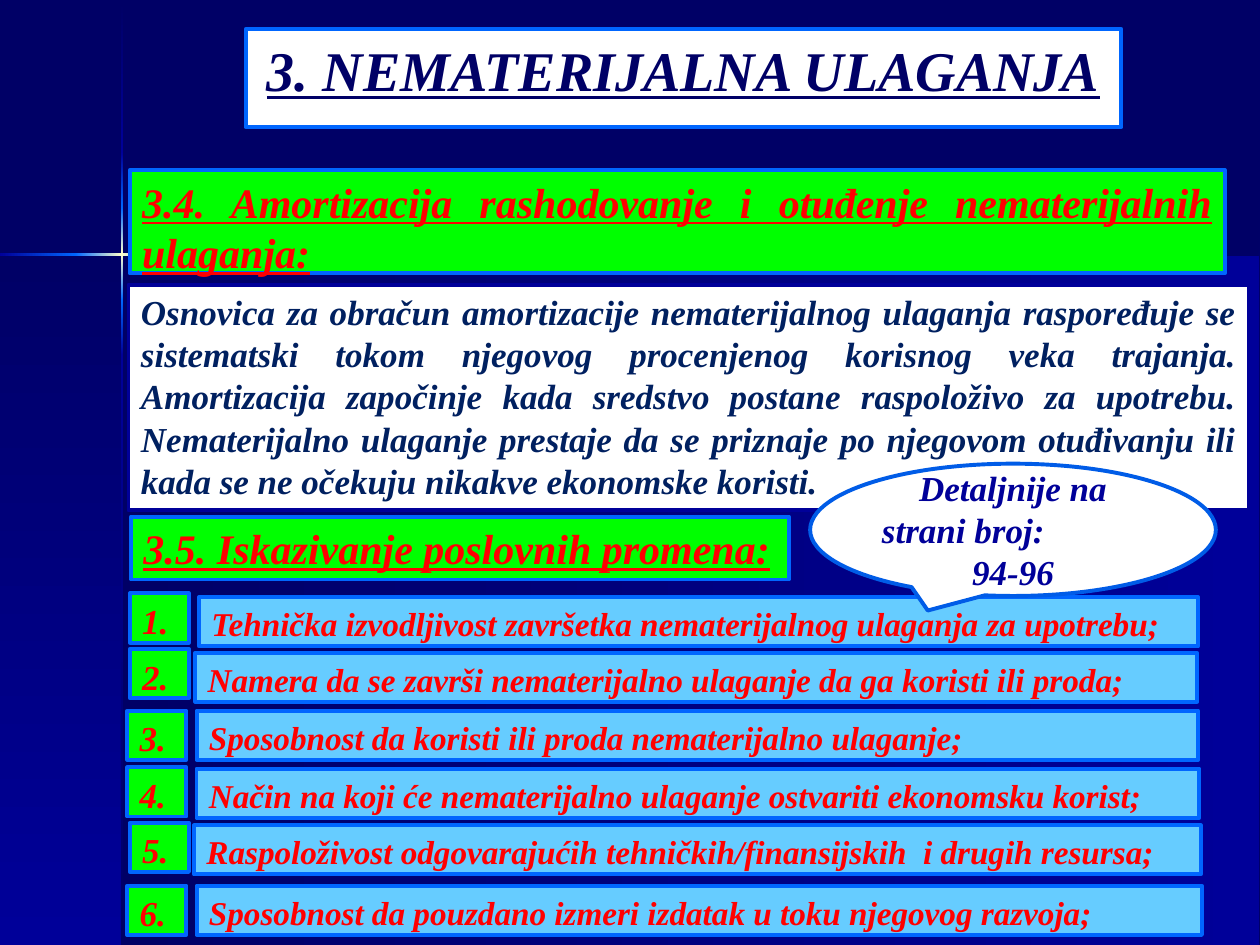
from copy import deepcopy

from pptx import Presentation
from pptx.dml.color import RGBColor
from pptx.enum.shapes import MSO_SHAPE
from pptx.enum.text import MSO_ANCHOR, MSO_AUTO_SIZE, PP_ALIGN
from pptx.oxml.ns import qn
from pptx.util import Inches, Pt

RECT, BUBBLE = MSO_SHAPE.RECTANGLE, MSO_SHAPE.OVAL_CALLOUT
TOP, MIDDLE = MSO_ANCHOR.TOP, MSO_ANCHOR.MIDDLE
LEFT, CENTER, JUST = PP_ALIGN.LEFT, PP_ALIGN.CENTER, PP_ALIGN.JUSTIFY
FIXED = MSO_AUTO_SIZE.NONE

NAVY = RGBColor(0x00, 0x00, 0x66)
BLUE = RGBColor(0x00, 0x00, 0x99)
EDGE = RGBColor(0x00, 0x66, 0xFF)
RIM = RGBColor(0x00, 0x5C, 0xE7)
INK = RGBColor(0x00, 0x20, 0x60)
SKY = RGBColor(0x66, 0xCC, 0xFF)
GREEN = RGBColor(0x00, 0xFF, 0x00)
RED = RGBColor(0xFF, 0x00, 0x00)
CREAM = RGBColor(0xFF, 0xFF, 0xCC)
WHITE = RGBColor(0xFF, 0xFF, 0xFF)

COLS, ROWS = 100, 75
ACROSS, DOWN = 0, 270


class Deck:
    """Style and current slide; places are columns and rows of a 100 x 75 grid."""

    font = {"name": "Times New Roman", "bold": True, "italic": True}

    def __init__(self):
        self.prs = Presentation()
        self.prs.slide_width, self.prs.slide_height = Inches(10), Inches(7.5)
        self.slide = self.prs.slides.add_slide(self.prs.slide_layouts[5])
        fill = self.slide.background.fill
        fill.solid()
        fill.fore_color.rgb = NAVY

    def place(self, at):
        """Turn grid left, top, width and height into slide lengths."""
        col, row = self.prs.slide_width / COLS, self.prs.slide_height / ROWS
        return [round(n * unit) for n, unit in zip(at, (col, row, col, row))]

    def shape(self, at, kind=RECT):
        item = self.slide.shapes.add_shape(kind, *self.place(at))
        item.shadow.inherit = False
        return item

    def fade(self, at, angle, first, last, mid=None):
        """Draw a panel or bar with a gradient and no outline."""
        item = self.shape(at)
        item.line.fill.background()
        item.fill.gradient()
        item.fill.gradient_angle = angle
        stops = item.fill.gradient_stops
        for stop, pos, color in zip(stops, (0, 1), (first, last)):
            stop.position = pos
            stop.color.rgb = color
        if mid is not None:
            start = item.element.spPr.find(".//" + qn("a:gs"))
            start.addnext(deepcopy(start))
            center = item.fill.gradient_stops[1]
            center.position = 0.5
            center.color.rgb = mid

    def dress(self, item, lines, fill, edge, aligns, anchor=TOP, **font):
        """Fill and outline a shape, then write one paragraph per line."""
        item.fill.solid()
        item.fill.fore_color.rgb = fill
        item.line.color.rgb = edge
        item.line.width = Pt(2.25)
        frame = item.text_frame
        form = {"word_wrap": True, "auto_size": FIXED, "vertical_anchor": anchor,
                "margin_left": Inches(0.1), "margin_right": Inches(0.1),
                "margin_top": Inches(0.05), "margin_bottom": Inches(0.05)}
        for name, value in form.items():
            setattr(frame, name, value)
        frame.text = "\n".join(lines)
        color = font.pop("color")
        for para, align in zip(frame.paragraphs, aligns):
            para.alignment = align
            for run in para.runs:
                for name, value in {**self.font, **font}.items():
                    setattr(run.font, name, value)
                run.font.color.rgb = color

    def title(self, at, text, **font):
        item = self.slide.shapes.title
        item.left, item.top, item.width, item.height = self.place(at)
        self.dress(item, [text], WHITE, EDGE, [CENTER], **font)

    def box(self, at, text, fill, edge=EDGE, align=LEFT, **font):
        self.dress(self.shape(at), [text], fill, edge, [align], **font)

    def bubble(self, at, tip, lines, aligns, **font):
        item = self.shape(at, BUBBLE)
        item.adjustments[0], item.adjustments[1] = tip
        self.dress(item, lines, WHITE, RIM, aligns, MIDDLE, **font)


FADES = [
    # Panels
    ((9.7, 20.2, 90.2, 54.8), ACROSS, NAVY, BLUE),
    ((0, 20.2, 9.7, 54.8), DOWN, NAVY, BLUE),
    # Upright bar
    ((9.6, 0.1, 0.2, 12), DOWN, NAVY, BLUE),
    ((9.6, 28.2, 0.2, 46.8), DOWN, BLUE, NAVY),
    ((9.6, 23.8, 0.2, 4.4), DOWN, EDGE, BLUE),
    ((9.6, 12.1, 0.2, 4.4), DOWN, BLUE, EDGE),
    ((9.6, 16.5, 0.2, 7.3), DOWN, EDGE, EDGE, CREAM),
    # Level bar
    ((17.7, 20.1, 82.2, 0.2), ACROSS, BLUE, NAVY),
    ((0, 20.1, 6.1, 0.2), ACROSS, BLUE, EDGE),
    ((6, 20.1, 7.3, 0.2), ACROSS, EDGE, EDGE, CREAM),
]

BASIS = (
    "Osnovica za obračun amortizacije nematerijalnog ulaganja raspoređuje se "
    "sistematski tokom njegovog procenjenog korisnog veka trajanja. "
    "Amortizacija započinje kada sredstvo postane raspoloživo za upotrebu. "
    "Nematerijalno ulaganje prestaje da se priznaje po njegovom otuđivanju ili "
    "kada se ne očekuju nikakve ekonomske koristi."
)

# Number left and top, item left, top and width, wording
ITEMS = [
    (10.3, 47.1, 15.8, 47.4, 79.3,
     "Tehnička izvodljivost završetka nematerijalnog ulaganja za upotrebu;"),
    (10.3, 51.5, 15.5, 51.8, 79.5,
     "Namera da se završi nematerijalno ulaganje da ga koristi ili proda;"),
    (10.1, 56.4, 15.6, 56.4, 79.5,
     "Sposobnost da koristi ili proda nematerijalno ulaganje;"),
    (10.1, 60.9, 15.6, 61, 79.6,
     "Način na koji će nematerijalno ulaganje ostvariti ekonomsku korist;"),
    (10.3, 65.3, 15.4, 65.5, 79.9,
     "Raspoloživost odgovarajućih tehničkih/finansijskih  i drugih resursa;"),
    (10.1, 70.3, 15.6, 70.3, 79.8,
     "Sposobnost da pouzdano izmeri izdatak u toku njegovog razvoja;"),
]


def main():
    deck = Deck()

    # Backdrop
    for fade in FADES:
        deck.fade(*fade)

    # Title and headings
    deck.title((19.5, 2.3, 69.5, 7.8), "3. NEMATERIJALNA ULAGANJA",
               size=Pt(32), color=NAVY, underline=True)
    head = {"fill": GREEN, "align": JUST, "size": Pt(24), "color": RED,
            "underline": True}
    deck.box((10.3, 13.5, 86.9, 8.2),
             "3.4. Amortizacija rashodovanje i otuđenje nematerijalnih ulaganja:",
             **head)
    deck.box((10.2, 22.6, 88.9, 17.9), BASIS, WHITE, BLUE, JUST,
             size=Pt(20), color=INK)
    deck.box((10.4, 41, 52.2, 5), "3.5. Iskazivanje poslovnih promena:", **head)

    # Numbered items
    tall = 3.9
    for num, (left, top, col, row, wide, text) in enumerate(ITEMS, 1):
        deck.box((left, top, 4.7, tall), f"{num}.", GREEN, size=Pt(20), color=RED)
        deck.box((col, row, wide, tall), text, SKY, size=Pt(19), color=RED)

    # Page hint
    deck.bubble((64.3, 36.8, 32.2, 10.5), (-0.21, 0.61),
                ["Detaljnije na", "strani broj:", "94-96"],
                [CENTER, LEFT, CENTER], size=Pt(20), color=BLUE)

    deck.prs.save("out.pptx")


if __name__ == "__main__":
    main()
